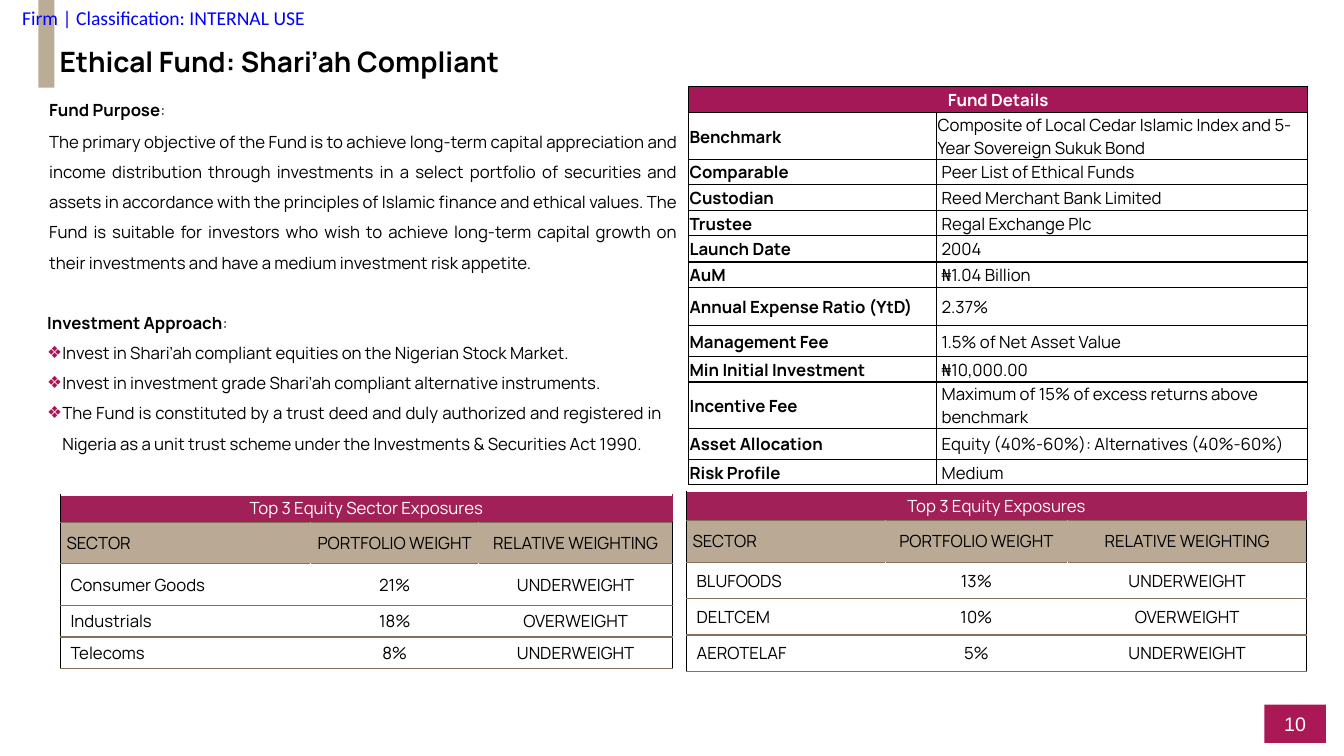
"""Build the Ethical Fund slide with its details and exposure tables."""
from lxml import etree
from pptx import Presentation, util as u
from pptx.dml.color import RGBColor
from pptx.enum import shapes, text
from pptx.oxml.ns import qn

WIDE, HIGH = 13.33, 7.5
FACE, SIZE = "Manrope", 12
HUES = dict(black="000000", white="FFFFFF", wine="A41857", plum="A12057",
            badge="AB1856", bar="BBAC97", tan="BAAA95", brown="86705B",
            blue="0000FF")
TITLE = "Ethical Fund: Shari’ah Compliant"
LABEL = "Firm | Classification: INTERNAL USE"
PAGE = "10"
GOAL = ("Fund Purpose", ": ", [
    "The primary objective of the Fund is to achieve long-term capital appreciation and "
    "income distribution through investments in a select portfolio of securities and "
    "assets in accordance with the principles of Islamic finance and ethical values. The "
    "Fund is suitable for investors who wish to achieve long-term capital growth on "
    "their investments and have a medium investment risk appetite."])
PLAN = ("Investment Approach", ":", [
    "Invest in Shari’ah compliant equities on the Nigerian Stock Market.",
    "Invest in investment grade Shari’ah compliant alternative instruments.",
    "The Fund is constituted by a trust deed and duly authorized and registered in "
    "Nigeria as a unit trust scheme under the Investments & Securities Act 1990."])
FACTS = [
    ("Benchmark", "Composite of Local Cedar Islamic Index and 5-Year Sovereign Sukuk Bond", 0.46),
    ("Comparable", "Peer List of Ethical Funds", 0.25),
    ("Custodian", "Reed Merchant Bank Limited", 0.26),
    ("Trustee", "Regal Exchange Plc", 0.25),
    ("Launch Date", "2004", 0.26),
    ("AuM", "₦1.04 Billion", 0.25),
    ("Annual Expense Ratio (YtD)", "2.37%", 0.38),
    ("Management Fee", "1.5% of Net Asset Value", 0.31),
    ("Min Initial Investment", "₦10,000.00", 0.25),
    ("Incentive Fee", "Maximum of 15% of excess returns above\nbenchmark", 0.46),
    ("Asset Allocation", "Equity (40%-60%): Alternatives (40%-60%)", 0.31),
    ("Risk Profile", "Medium", 0.25),
]
HEADS = ("SECTOR", "PORTFOLIO WEIGHT", "RELATIVE WEIGHTING")
TOPS = [
    ("Top 3 Equity Sector Exposures", (0.6, 4.91), (2.48, 1.67, 1.92),
     (0.27, 0.41, 0.42, 0.31, 0.31),
     [("Consumer Goods", "21%", "UNDERWEIGHT"),
      ("Industrials", "18%", "OVERWEIGHT"),
      ("Telecoms", "8%", "UNDERWEIGHT")]),
    ("Top 3 Equity Exposures", (6.81, 4.88), (1.97, 1.81, 2.37),
     (0.28, 0.42, 0.36, 0.36, 0.36),
     [("BLUFOODS", "13%", "UNDERWEIGHT"),
      ("DELTCEM", "10%", "OVERWEIGHT"),
      ("AEROTELAF", "5%", "UNDERWEIGHT")]),
]
LEFT, MID, JUST = (text.PP_ALIGN.LEFT, text.PP_ALIGN.CENTER, text.PP_ALIGN.JUSTIFY)


def tint(name):
    return RGBColor.from_string(HUES[name])


def style(para, hue="black", size=SIZE, face=FACE, bold=False, align=LEFT):
    font = para.font
    font.name, font.size, font.bold = face, u.Pt(size), bold
    font.color.rgb = tint(hue)
    para.alignment = align


def block(page, left, top, wide, high, hue):
    box = page.shapes.add_shape(shapes.MSO_SHAPE.RECTANGLE,
                                *map(u.Inches, (left, top, wide, high)))
    box.shadow.inherit = False
    box.fill.solid()
    box.fill.fore_color.rgb = tint(hue)
    box.line.fill.background()
    return box


def frame(page, left, top, wide, high):
    body = page.shapes.add_textbox(*map(u.Inches, (left, top, wide, high))).text_frame
    body.word_wrap = True
    return body


def bullet(para):
    props = para._p.get_or_add_pPr()
    props.set("marL", str(u.Inches(0.15)))
    props.set("indent", str(-u.Inches(0.15)))
    mark = etree.SubElement(props, qn("a:buClr"))
    etree.SubElement(mark, qn("a:srgbClr"), val=HUES["wine"])
    etree.SubElement(props, qn("a:buFont"), typeface="Arial")
    etree.SubElement(props, qn("a:buChar"), char="❖")


def prose(body, part, first, after, dots):
    head, tail, lines = part
    para = body.paragraphs[0]
    for words, bold in ((head, True), (tail, False)):
        run = para.add_run()
        run.text, run.font.bold = words, bold
    style(para, align=JUST)
    para.line_spacing, para.space_after = first, u.Pt(after)
    for line in lines:
        para = body.add_paragraph()
        para.text = line
        para.line_spacing, para.space_after = 1.5, u.Pt(after)
        if dots:
            bullet(para)
        style(para, align=JUST)


def grid(page, spot, cols, rows):
    area = (*spot, sum(cols), sum(rows))
    table = page.shapes.add_table(len(rows), len(cols), *map(u.Inches, area)).table
    table.first_row = table.horz_banding = False
    for col, wide in zip(table.columns, cols):
        col.width = u.Inches(wide)
    for row, high in zip(table.rows, rows):
        row.height = u.Inches(high)
    return table


def fill(cell, words, edges, pads, back=None, **look):
    """Write a cell; edges are the left, right, top and bottom hues."""
    props = cell._tc.get_or_add_tcPr()
    for side, hue in zip("LRTB", edges):
        line = etree.SubElement(props, qn("a:ln" + side), w=str(u.Pt(1)))
        solid = etree.SubElement(line, qn("a:solidFill"))
        etree.SubElement(solid, qn("a:srgbClr"), val=HUES[hue])
    if back:
        cell.fill.solid()
        cell.fill.fore_color.rgb = tint(back)
    else:
        cell.fill.background()
    cell.vertical_anchor = text.MSO_ANCHOR.MIDDLE
    (cell.margin_left, cell.margin_right,
     cell.margin_top, cell.margin_bottom) = map(u.Inches, pads)
    cell.text_frame.text = words
    for para in cell.text_frame.paragraphs:
        style(para, **look)


def facts(page):
    table = grid(page, (6.83, 0.86), (2.46, 3.68), [0.26] + [row[2] for row in FACTS])
    edges = ["black"] * 4
    for col, words in enumerate(("Fund Details", "")):
        fill(table.cell(0, col), words, edges, (0.01, 0.01, 0.01, 0), "wine",
             hue="white", bold=True, align=MID)
    table.cell(0, 0).merge(table.cell(0, 1))
    for num, pair in enumerate(FACTS, 1):
        for col in range(2):
            inset = 0.05 if col and num > 1 else 0.01
            fill(table.cell(num, col), pair[col], edges,
                 (inset, 0.01, 0.01, 0), bold=not col)


def tops(page, name, spot, cols, rows, data):
    table = grid(page, spot, cols, rows)
    looks = [("plum", "plum", 0.08), ("tan", "tan", 0.06)] + [(None, "white", 0.1)] * len(data)
    for num, (row, look) in enumerate(zip([(name, "", ""), HEADS, *data], looks)):
        back, inner, pad = look
        for col, words in enumerate(row):
            edges = (inner if col else "black", inner if col < 2 else "black",
                     "brown" if num else "white", "brown")
            fill(table.cell(num, col), words, edges, (pad, pad, 0.02, 0.02), back,
                 hue="black" if num else "white",
                 align=MID if col or not num else LEFT)
    table.cell(0, 0).merge(table.cell(0, 2))


def main():
    deck = Presentation()
    deck.slide_width, deck.slide_height = u.Inches(WIDE), u.Inches(HIGH)
    page = deck.slides.add_slide(deck.slide_layouts[5])
    block(page, 0.38, 0, 0.16, 0.87, "bar")
    badge = block(page, 12.54, 6.99, 0.61, 0.38, "badge").text_frame
    badge.text = PAGE
    badge.vertical_anchor = text.MSO_ANCHOR.MIDDLE
    style(badge.paragraphs[0], "white", 14, "Arial", align=MID)

    label = frame(page, 0.22, 0, 3.06, 0.36)
    label.margin_left = label.margin_right = label.margin_top = label.margin_bottom = 0
    label.vertical_anchor = text.MSO_ANCHOR.MIDDLE
    label.text = LABEL
    style(label.paragraphs[0], "blue", 14, "Calibri")

    title = page.shapes.title
    title.left, title.top, title.width, title.height = map(u.Inches, (0.49, 0.4, 9.03, 0.46))
    title.text = TITLE
    title.text_frame.vertical_anchor = text.MSO_ANCHOR.MIDDLE
    style(title.text_frame.paragraphs[0], size=20, bold=True)
    title.text_frame.paragraphs[0].line_spacing = 0.9

    facts(page)
    prose(frame(page, 0.39, 0.94, 6.43, 2.1), GOAL, 1, 1.1, False)
    prose(frame(page, 0.37, 2.95, 6.3, 1.89), PLAN, 1.5, 0, True)
    for top in TOPS:
        tops(page, *top)
    deck.save("out.pptx")


if __name__ == "__main__":
    main()
